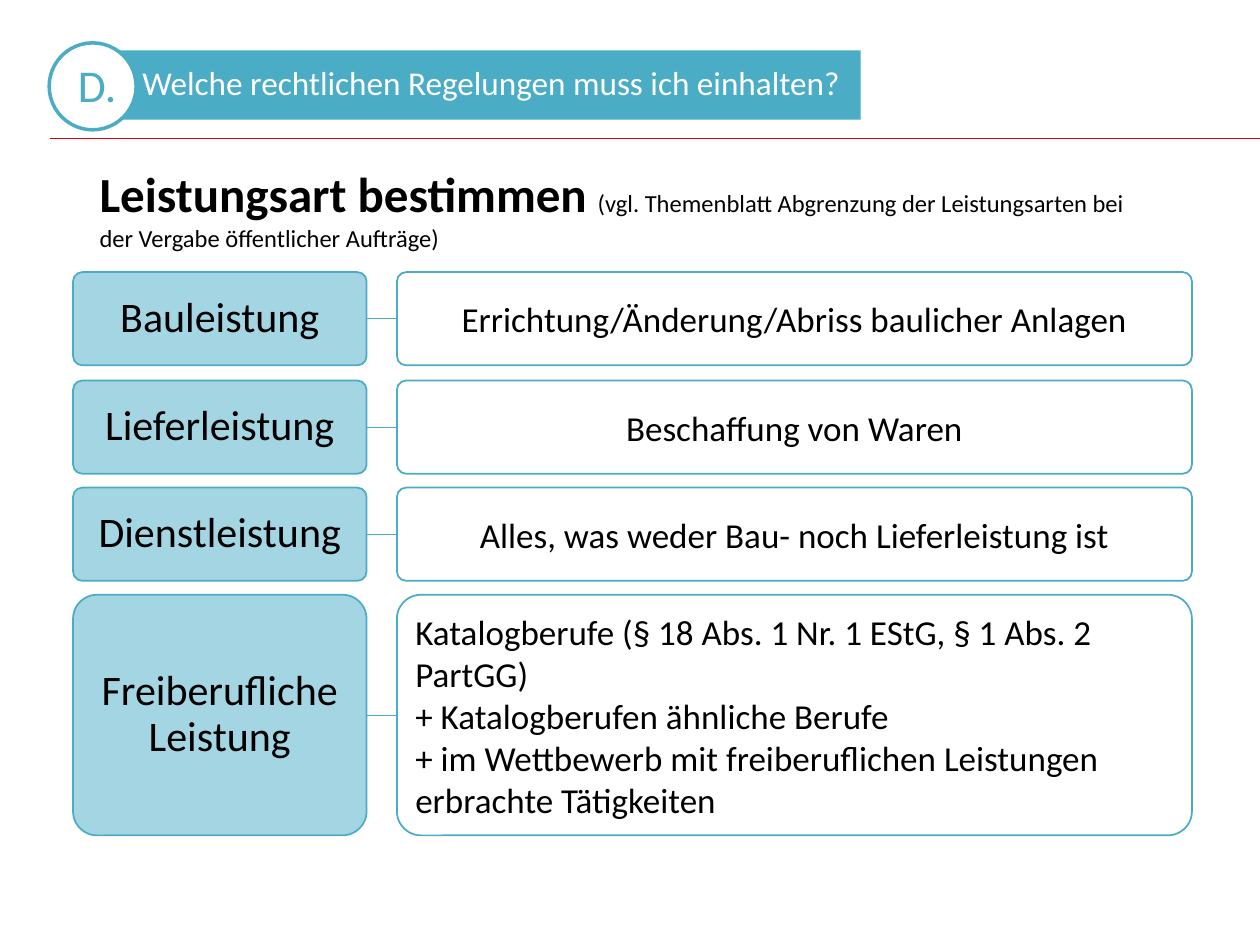
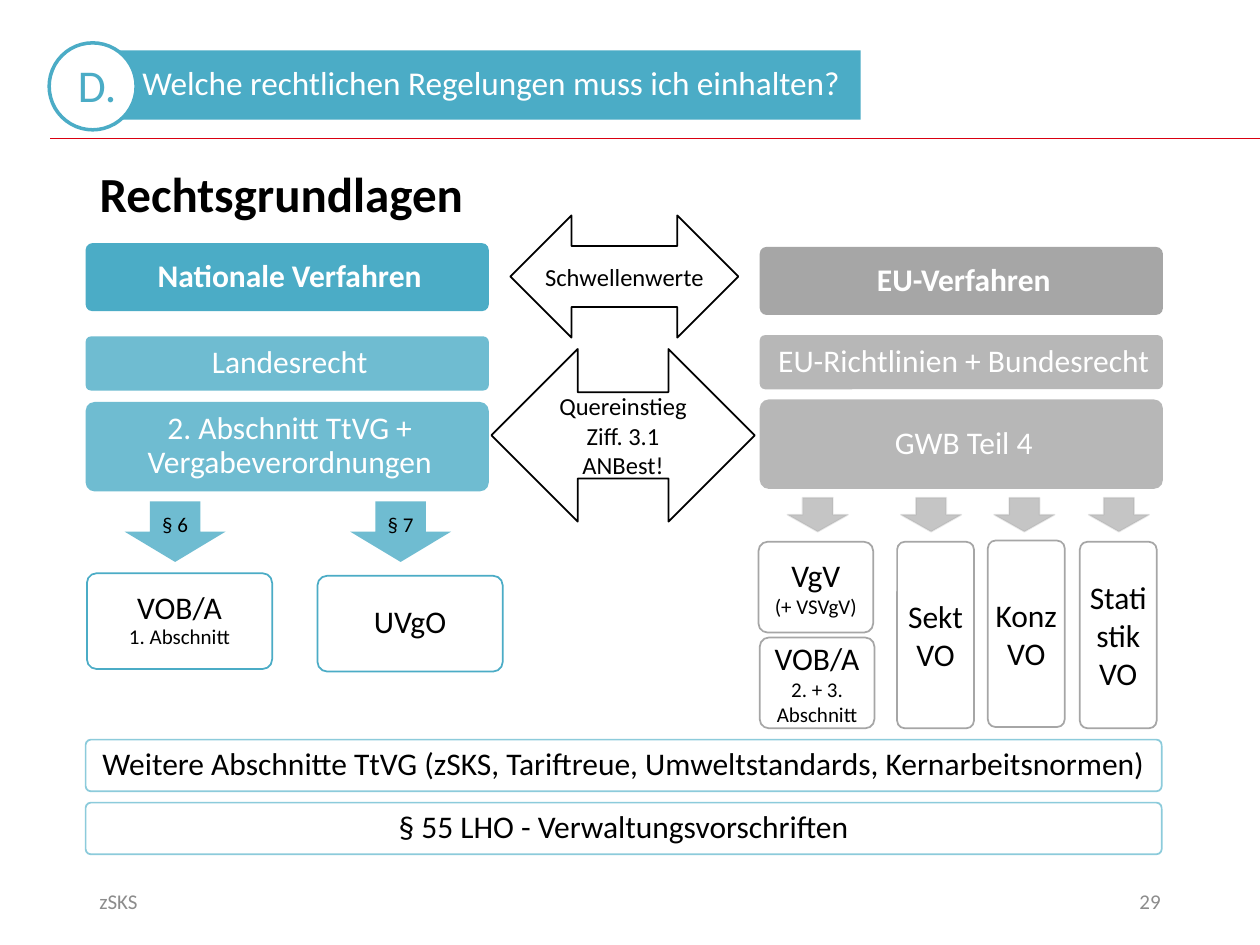
"""Builds two slides on types of service and legal bases in public procurement."""
import pptx
import pptx.util
import pptx.dml.color
import pptx.enum.shapes
import pptx.enum.text
import pptx.oxml.ns
import pptx.oxml.xmlchemy

Inches = pptx.util.Inches
SHAPE = pptx.enum.shapes.MSO_SHAPE
STRAIGHT = pptx.enum.shapes.MSO_CONNECTOR.STRAIGHT
ALIGN = pptx.enum.text.PP_ALIGN
ANCHOR = pptx.enum.text.MSO_ANCHOR
OxmlElement = pptx.oxml.xmlchemy.OxmlElement
FONT = "Calibri"
COLORS = {
    "teal": "4BACC6",
    "light teal": "8CCBDB",
    "gray": "A6A6A6",
    "light gray": "C5C5C5",
    "footer": "8C8C8C",
    "red": "D90011",
    "black": "000000",
    "white": "FFFFFF",
}


def set_color(color_format, name, opacity=100):
    color_format.rgb = pptx.dml.color.RGBColor.from_string(COLORS[name])
    if opacity < 100:
        alpha = OxmlElement("a:alpha")
        alpha.set("val", str(opacity * 1000))
        color_format._xFill.find(pptx.oxml.ns.qn("a:srgbClr")).append(alpha)


def add_box(slide, kind, place, lines=(), color="black", fill=None, opacity=100, line=None,
            line_width=1, line_opacity=100, inset=0.02, left_inset=None, bold=False,
            align=ALIGN.CENTER, spacing=None):
    lengths = [Inches(value) for value in place]
    if kind is None:
        shape = slide.shapes.add_textbox(*lengths)
    else:
        shape = slide.shapes.add_shape(kind, *lengths)
        shape.shadow.inherit = False
        if kind == SHAPE.ROUNDED_RECTANGLE:
            shape.adjustments[0] = 0.1
    for part, name, part_opacity in ((shape.fill, fill, opacity), (shape.line.fill, line, line_opacity)):
        if name:
            part.solid()
            set_color(part.fore_color, name, part_opacity)
        else:
            part.background()
    if line:
        shape.line.width = pptx.util.Pt(line_width)
    frame = shape.text_frame
    frame.word_wrap = True
    frame.vertical_anchor = ANCHOR.MIDDLE
    frame.margin_left = Inches(inset if left_inset is None else left_inset)
    frame.margin_top = frame.margin_right = frame.margin_bottom = Inches(inset)
    for index, (text, size) in enumerate(lines):
        paragraph = frame.add_paragraph() if index else frame.paragraphs[0]
        paragraph.text = text
        paragraph.alignment = align
        if spacing:
            paragraph.line_spacing = spacing
        paragraph.font.name = FONT
        paragraph.font.size = pptx.util.Pt(size)
        paragraph.font.bold = bold
        set_color(paragraph.font.color, color)
    return shape


presentation = pptx.Presentation()
presentation.slide_width = Inches(10)
presentation.slide_height = Inches(7.5)

titles = [
    [("Leistungsart bestimmen ", 28, True),
     ("(vgl. Themenblatt Abgrenzung der Leistungsarten bei der Vergabe öffentlicher Aufträge)", 14, False)],
    [("Rechtsgrundlagen", 28, True)],
]
slides = []
for title_runs, title_height in zip(titles, (0.81, 0.57)):
    slide = presentation.slides.add_slide(presentation.slide_layouts[5])
    slides.append(slide)
    rule = slide.shapes.add_connector(STRAIGHT, Inches(0.4), Inches(1.1), Inches(10), Inches(1.1))
    set_color(rule.line.color, "red")
    rule.line.width = pptx.util.Pt(1)
    rule._element.spPr.append(OxmlElement("a:effectLst"))
    add_box(slide, SHAPE.RECTANGLE, (0.69, 0.4, 6.14, 0.55),
            [("Welche rechtlichen Regelungen muss ich einhalten?", 19)], "white", fill="teal",
            inset=0.05, left_inset=0.44, align=ALIGN.LEFT, spacing=0.9)
    add_box(slide, SHAPE.OVAL, (0.39, 0.34, 0.69, 0.69), fill="white", line="teal", line_width=2)
    add_box(slide, None, (0.52, 0.4, 0.71, 0.54), [("D.", 26)], "teal",
            inset=0.05, left_inset=0.1, align=ALIGN.LEFT)

    title = slide.shapes.title
    title.left, title.top = Inches(0.69), Inches(1.25)
    title.width, title.height = Inches(8.54), Inches(title_height)
    title.text_frame.auto_size = pptx.enum.text.MSO_AUTO_SIZE.NONE
    title.text_frame.vertical_anchor = ANCHOR.TOP
    paragraph = title.text_frame.paragraphs[0]
    paragraph.alignment = ALIGN.LEFT
    for text, size, bold in title_runs:
        run = paragraph.add_run()
        run.text = text
        run.font.name = FONT
        run.font.size = pptx.util.Pt(size)
        run.font.bold = bold
        set_color(run.font.color, "black")

services_slide, law_slide = slides

services = [
    ("Bauleistung", "Errichtung/Änderung/Abriss baulicher Anlagen", 2.16, 0.74, ALIGN.CENTER),
    ("Lieferleistung", "Beschaffung von Waren", 3.02, 0.74, ALIGN.CENTER),
    ("Dienstleistung", "Alles, was weder Bau- noch Lieferleistung ist", 3.87, 0.74, ALIGN.CENTER),
    ("Freiberufliche Leistung",
     "Katalogberufe (§ 18 Abs. 1 Nr. 1 EStG, § 1 Abs. 2 PartGG)\v+ Katalogberufen ähnliche Berufe\v"
     "+ im Wettbewerb mit freiberuflichen Leistungen erbrachte Tätigkeiten", 4.72, 1.91, ALIGN.LEFT),
]
for service, meaning, top, height, align in services:
    service_box = add_box(services_slide, SHAPE.ROUNDED_RECTANGLE, (0.58, top, 2.33, height),
                          [(service, 24)], fill="teal", opacity=50, line="teal", inset=0.09, spacing=0.9)
    meaning_box = add_box(services_slide, SHAPE.ROUNDED_RECTANGLE, (3.15, top, 6.31, height),
                          [(meaning, 20)], line="teal", inset=0.09, align=align)
    link = services_slide.shapes.add_connector(STRAIGHT, 0, 0, 0, 0)
    link.begin_connect(service_box, 3)
    link.end_connect(meaning_box, 1)
    set_color(link.line.color, "teal")
    link.line.width = pptx.util.Pt(0.5)
    link._element.spPr.append(OxmlElement("a:effectLst"))

for left, text, align in ((0.69, "zSKS", ALIGN.LEFT), (7.06, "29", ALIGN.RIGHT)):
    add_box(law_slide, None, (left, 6.95, 2.25, 0.4), [(text, 12)], "footer", inset=0.1, align=align)

bridges = [
    ((4.05, 1.71, 1.81, 0.97), ["Schwellenwerte"]),
    ((3.9, 2.77, 2.09, 1.37), ["Quereinstieg", "Ziff. 3.1", "ANBest!"]),
]
for place, texts in bridges:
    add_box(law_slide, SHAPE.LEFT_RIGHT_ARROW, place, [(text, 14) for text in texts], line="black", inset=0)

for left, text in ((0.99, "§ 6"), (2.78, "§ 7")):
    add_box(law_slide, SHAPE.DOWN_ARROW, (left, 3.98, 0.8, 0.48), [(text, 12)],
            fill="teal", opacity=80, inset=0)
for left in (6.25, 7.15, 7.89, 8.64):
    add_box(law_slide, SHAPE.DOWN_ARROW, (left, 3.95, 0.48, 0.27), fill="light gray",
            line="gray", line_opacity=25)

levels = [
    (0.68, 1.93, 0.54, "teal", 100, ["Nationale Verfahren"]),
    (0.68, 2.67, 0.43, "teal", 80, ["Landesrecht"]),
    (0.68, 3.19, 0.71, "teal", 80, ["2. Abschnitt TtVG +", "Vergabeverordnungen"]),
    (6.03, 1.96, 0.54, "gray", 100, ["EU-Verfahren"]),
    (6.03, 2.66, 0.43, "gray", 80, ["EU-Richtlinien + Bundesrecht"]),
    (6.03, 3.17, 0.71, "gray", 80, ["GWB Teil 4"]),
]
for left, top, height, fill, opacity, texts in levels:
    add_box(law_slide, SHAPE.ROUNDED_RECTANGLE, (left, top, 3.2, height), [(text, 18) for text in texts],
            "white", fill=fill, opacity=opacity, bold=opacity == 100, spacing=0.9, left_inset=0.06)

regulations = [
    ((0.69, 4.55, 1.47, 0.76), "teal", 0.9, [("VOB/A", 18), ("1. Abschnitt", 12)]),
    ((2.52, 4.57, 1.47, 0.76), "teal", 0.9, [("UVgO", 18)]),
    ((6.02, 4.3, 0.91, 0.72), "gray", None, [("VgV", 18), ("(+ VSVgV)", 12)]),
    ((6.03, 5.06, 0.91, 0.72), "gray", None, [("VOB/A", 18), ("2. + 3. Abschnitt", 12)]),
    ((7.12, 4.3, 0.61, 1.48), "gray", None, [("SektVO", 18)]),
    ((7.84, 4.29, 0.61, 1.48), "gray", None, [("KonzVO", 18)]),
    ((8.57, 4.3, 0.61, 1.48), "gray", None, [("Stati", 18), ("stik", 18), ("VO", 18)]),
    ((0.68, 5.87, 8.54, 0.41), "light teal", 0.9,
     [("Weitere Abschnitte TtVG (zSKS, Tariftreue, Umweltstandards, Kernarbeitsnormen)", 18)]),
    ((0.68, 6.37, 8.54, 0.41), "light teal", 0.9, [("§ 55 LHO - Verwaltungsvorschriften", 18)]),
]
for place, line, spacing, lines in regulations:
    add_box(law_slide, SHAPE.ROUNDED_RECTANGLE, place, lines, line=line, spacing=spacing)

presentation.save("out.pptx")
